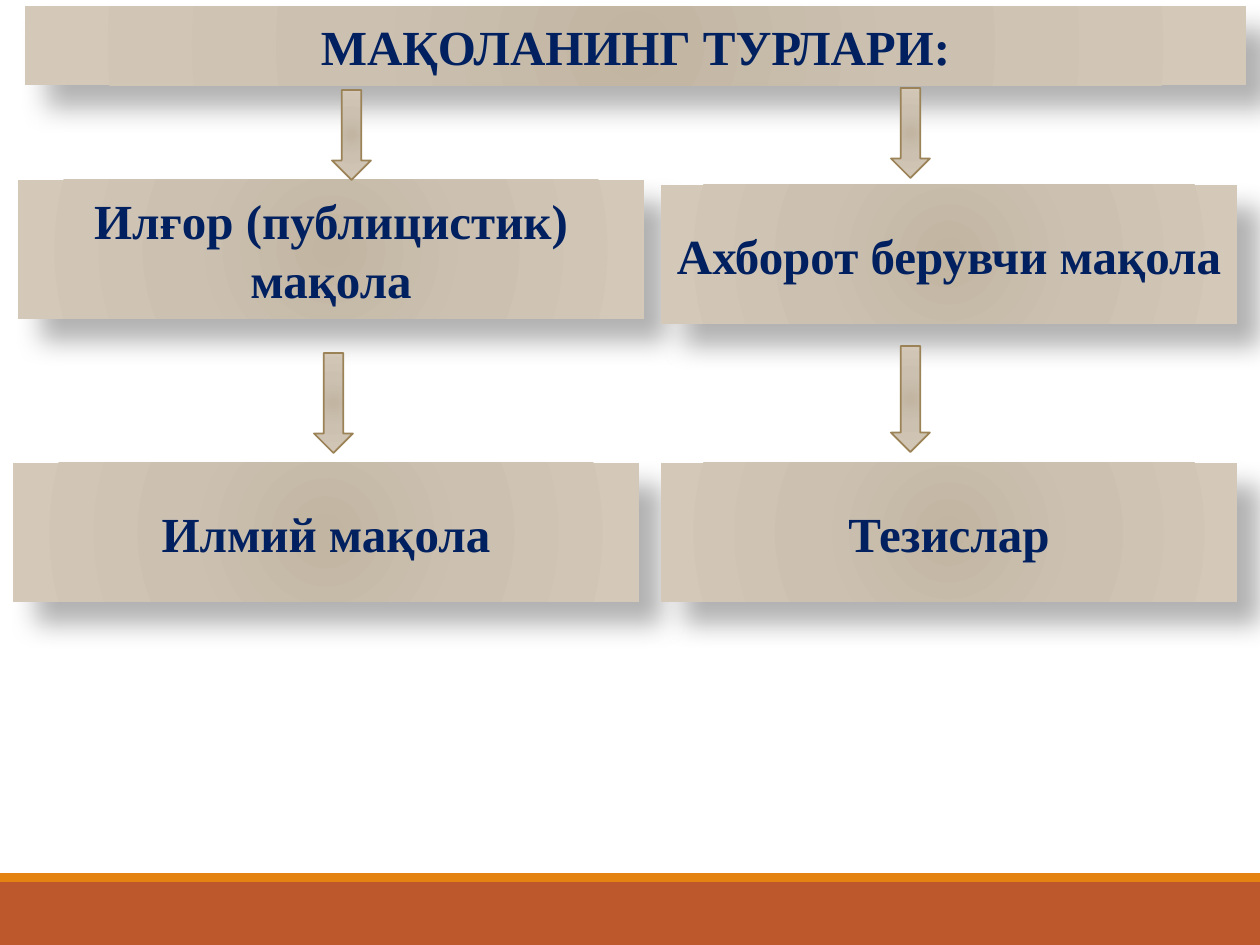
import pptx
import pptx.dml.color
import pptx.enum.shapes
import pptx.enum.text
import pptx.oxml
import pptx.oxml.ns
import pptx.util

RGBColor = pptx.dml.color.RGBColor
Shape = pptx.enum.shapes.MSO_SHAPE

EMU_PER_PX = 914400 / 126
NAVY = RGBColor(0x00, 0x20, 0x60)
BRONZE = RGBColor(0x9B, 0x83, 0x57)
RUST = RGBColor(0xBD, 0x58, 0x2C)
ORANGE = RGBColor(0xE4, 0x83, 0x12)
BLACK = RGBColor(0, 0, 0)
SAND = [(0, RGBColor(0xC2, 0xB5, 0xA2)),
        (45, RGBColor(0xCC, 0xC1, 0xB1)),
        (100, RGBColor(0xD4, 0xC8, 0xB8))]


def px(length):
    return pptx.util.Emu(round(length * EMU_PER_PX))


class SlideBuilder:
    font = "Times New Roman"
    size = pptx.util.Pt(28)

    def __init__(self, slide):
        self.slide = slide

    def shape(self, kind, box):
        shape = self.slide.shapes.add_shape(kind, *map(px, box))
        shape.shadow.inherit = False
        shape.line.fill.background()
        return shape

    def band(self, box, color):
        band = self.shape(Shape.RECTANGLE, box)
        band.fill.solid()
        band.fill.fore_color.rgb = color

    def sand_fill(self, shape):
        """Radial gradient, darkest in the middle."""
        stops = "".join(
            f'<a:gs pos="{pos * 1000}"><a:srgbClr val="{color}"/></a:gs>'
            for pos, color in SAND)
        gradient = pptx.oxml.parse_xml(
            f'<a:gradFill {pptx.oxml.ns.nsdecls("a")} rotWithShape="1">'
            f'<a:gsLst>{stops}</a:gsLst><a:path path="circle">'
            '<a:fillToRect l="100000" t="100000" r="100000" b="100000"/>'
            '</a:path></a:gradFill>')
        shape.fill.gradient()
        properties = shape.element.spPr
        properties.replace(
            properties.find(pptx.oxml.ns.qn("a:gradFill")), gradient)

    def drop_shadow(self, shape):
        effects = shape.element.spPr.find(pptx.oxml.ns.qn("a:effectLst"))
        effects.append(pptx.oxml.parse_xml(
            f'<a:outerShdw {pptx.oxml.ns.nsdecls("a")} '
            f'blurRad="{pptx.util.Pt(15)}" dist="{pptx.util.Pt(18)}" '
            'dir="2700000" rotWithShape="0">'
            f'<a:srgbClr val="{BLACK}"><a:alpha val="30000"/></a:srgbClr>'
            '</a:outerShdw>'))

    def card(self, box, text):
        card = self.shape(Shape.ROUNDED_RECTANGLE, box)
        card.adjustments[0] = 0
        self.sand_fill(card)
        self.drop_shadow(card)
        frame = card.text_frame
        frame.word_wrap = True
        frame.vertical_anchor = pptx.enum.text.MSO_ANCHOR.MIDDLE
        paragraph = frame.paragraphs[0]
        paragraph.alignment = pptx.enum.text.PP_ALIGN.CENTER
        run = paragraph.add_run()
        run.text = text
        run.font.name = self.font
        run.font.size = self.size
        run.font.bold = True
        run.font.color.rgb = NAVY

    def down_arrow(self, left, top, height):
        arrow = self.shape(Shape.DOWN_ARROW, (left, top, 39, height))
        self.sand_fill(arrow)
        arrow.line.color.rgb = BRONZE
        arrow.line.width = pptx.util.Pt(1)


def main():
    deck = pptx.Presentation()
    deck.slide_width, deck.slide_height = px(1260), px(945)
    builder = SlideBuilder(deck.slides.add_slide(deck.slide_layouts[6]))

    # Footer bands
    builder.band((0, 882, 1260, 63), RUST)
    builder.band((0, 873, 1260, 9), ORANGE)

    # Title and the four kinds of article
    builder.card((25, 6, 1221, 79), "МАҚОЛАНИНГ ТУРЛАРИ:")
    for left, top, width, kind in [
            (18, 180, 626, "Илғор (публицистик) мақола"),
            (661, 185, 576, "Ахборот берувчи мақола"),
            (13, 463, 626, "Илмий мақола"),
            (661, 463, 576, "Тезислар")]:
        builder.card((left, top, width, 139), kind)

    # Arrows leading down to each kind
    for left, top, height in [(891, 88, 90), (332, 90, 90),
                              (314, 353, 100), (891, 346, 106)]:
        builder.down_arrow(left, top, height)

    deck.save("out.pptx")


if __name__ == "__main__":
    main()
